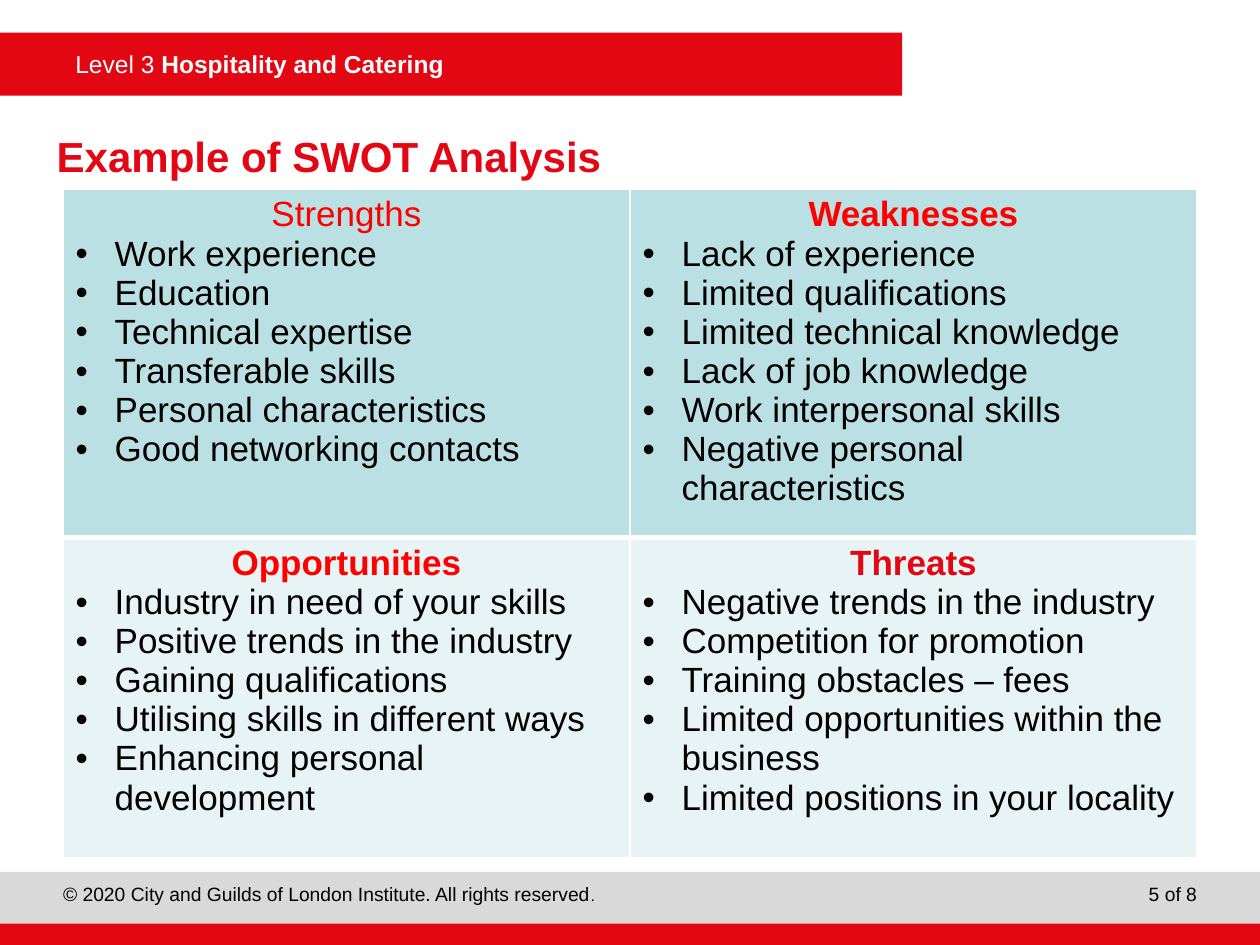
from dataclasses import dataclass

from lxml.etree import SubElement
from pptx import Presentation
from pptx.dml.color import RGBColor
from pptx.enum.shapes import MSO_SHAPE
from pptx.enum.text import MSO_ANCHOR, MSO_AUTO_SIZE, PP_ALIGN
from pptx.oxml.ns import qn
from pptx.util import Inches, Pt


@dataclass(frozen=True)
class Theme:
    font: str = "Arial"
    brand: str = "E30613"
    bright: str = "FF0000"
    grey: str = "D9D9D9"
    dark: str = "BBE0E3"
    pale: str = "E7F3F4"
    white: str = "FFFFFF"
    black: str = "000000"
    title: int = 24
    body: int = 20
    header: int = 14
    footer: int = 11
    stop: int = 9


@dataclass(frozen=True)
class Box:
    left: float
    top: float
    width: float
    height: float

    def emu(self) -> tuple:
        return tuple(map(Inches, (self.left, self.top, self.width, self.height)))


@dataclass(frozen=True)
class Run:
    text: str
    size: int
    color: str
    bold: bool = False


@dataclass(frozen=True)
class Panel:
    head: Run
    items: tuple
    fill: str
    base: float  # width of the bottom border in points


THEME = Theme()
BARS = (
    (Box(0, 0.26, 7.16, 0.5), THEME.brand),
    (Box(0, 6.92, 10, 0.42), THEME.grey),
    (Box(0, 7.33, 10, 0.17), THEME.brand),
)
GRID = (
    (
        Panel(
            Run("Strengths", THEME.body, THEME.bright),
            ("Work experience", "Education", "Technical expertise",
             "Transferable skills", "Personal characteristics",
             "Good networking contacts"),
            THEME.dark, 3),
        Panel(
            Run("Weaknesses", THEME.body, THEME.bright, True),
            ("Lack of experience", "Limited qualifications",
             "Limited technical knowledge", "Lack of job knowledge",
             "Work interpersonal skills", "Negative personal characteristics"),
            THEME.dark, 3),
    ),
    (
        Panel(
            Run("Opportunities", THEME.body, THEME.bright, True),
            ("Industry in need of your skills", "Positive trends in the industry",
             "Gaining qualifications", "Utilising skills in different ways",
             "Enhancing personal development"),
            THEME.pale, 1),
        Panel(
            Run("Threats", THEME.body, THEME.brand, True),
            ("Negative trends in the industry", "Competition for promotion",
             "Training obstacles – fees",
             "Limited opportunities within the business",
             "Limited positions in your locality"),
            THEME.pale, 1),
    ),
)


def paint(target, color: str) -> None:
    target.fill.solid()
    target.fill.fore_color.rgb = RGBColor.from_string(color)


def write(para, *runs: Run, align=PP_ALIGN.LEFT) -> None:
    para.alignment = align
    for item in runs:
        run = para.add_run()
        run.text = item.text
        run.font.name = THEME.font
        run.font.size = Pt(item.size)
        run.font.bold = item.bold
        run.font.color.rgb = RGBColor.from_string(item.color)


def add_bar(slide, box: Box, color: str) -> None:
    bar = slide.shapes.add_shape(MSO_SHAPE.RECTANGLE, *box.emu())
    bar.shadow.inherit = False
    paint(bar, color)
    bar.line.fill.background()


def add_text(slide, box: Box, *runs: Run, align=PP_ALIGN.LEFT, flush=False) -> None:
    """Add a one-line text box; flush removes its insets."""
    frame = slide.shapes.add_textbox(*box.emu()).text_frame
    frame.word_wrap = True
    if flush:
        frame.margin_left = frame.margin_right = 0
        frame.margin_top = frame.margin_bottom = 0
    write(frame.paragraphs[0], *runs, align=align)


def add_title(slide, box: Box, run: Run) -> None:
    title = slide.shapes.title
    title.left, title.top, title.width, title.height = box.emu()
    frame = title.text_frame
    frame.auto_size = MSO_AUTO_SIZE.NONE
    frame.vertical_anchor = MSO_ANCHOR.MIDDLE
    write(frame.paragraphs[0], run)


def add_bullet(para) -> None:
    props = para._p.get_or_add_pPr()
    indent = Inches(0.31)
    props.set("marL", str(indent))
    props.set("indent", str(-indent))
    SubElement(props, qn("a:buFont"), typeface=THEME.font)
    SubElement(props, qn("a:buChar"), char="•")


def add_edges(cell, base: float) -> None:
    """Draw white borders, which must come before the fill in the cell's XML."""
    props = cell._tc.get_or_add_tcPr()
    for spot, side in enumerate("LRTB"):
        width = base if side == "B" else 1
        line = SubElement(props, qn(f"a:ln{side}"), w=str(Pt(width)))
        fill = SubElement(line, qn("a:solidFill"))
        SubElement(fill, qn("a:srgbClr"), val=THEME.white)
        props.insert(spot, line)


def fill_cell(cell, panel: Panel) -> None:
    paint(cell, panel.fill)
    add_edges(cell, panel.base)
    frame = cell.text_frame
    write(frame.paragraphs[0], panel.head, align=PP_ALIGN.CENTER)
    for item in panel.items:
        para = frame.add_paragraph()
        add_bullet(para)
        write(para, Run(item, THEME.body, THEME.black))


def add_grid(slide, box: Box) -> None:
    shape = slide.shapes.add_table(len(GRID), len(GRID[0]), *box.emu())
    table = shape.table
    table.first_row = table.horz_banding = False
    for row, panels in enumerate(GRID):
        for col, panel in enumerate(panels):
            fill_cell(table.cell(row, col), panel)


def main() -> None:
    deck = Presentation()
    deck.slide_width, deck.slide_height = Inches(10), Inches(7.5)
    slide = deck.slides.add_slide(deck.slide_layouts.get_by_name("Title Only"))
    for box, color in BARS:
        add_bar(slide, box, color)
    add_text(slide, Box(0.5, 0.34, 6.66, 0.34),
             Run("Level 3 ", THEME.header, THEME.white),
             Run("Hospitality and Catering", THEME.header, THEME.white, True))
    add_text(slide, Box(0.5, 7, 7.08, 0.25),
             Run("© 2020 City and Guilds of London Institute. All rights reserved",
                 THEME.footer, THEME.black),
             Run(".", THEME.stop, THEME.black), flush=True)
    add_text(slide, Box(7.92, 7, 1.58, 0.25),
             Run("5 of 8", THEME.footer, THEME.black),
             align=PP_ALIGN.RIGHT, flush=True)
    add_title(slide, Box(0.35, 0.92, 8.99, 0.63),
              Run("Example of SWOT Analysis", THEME.title, THEME.brand, True))
    add_grid(slide, Box(0.5, 1.5, 9, 5.08))
    deck.save("out.pptx")


if __name__ == "__main__":
    main()
